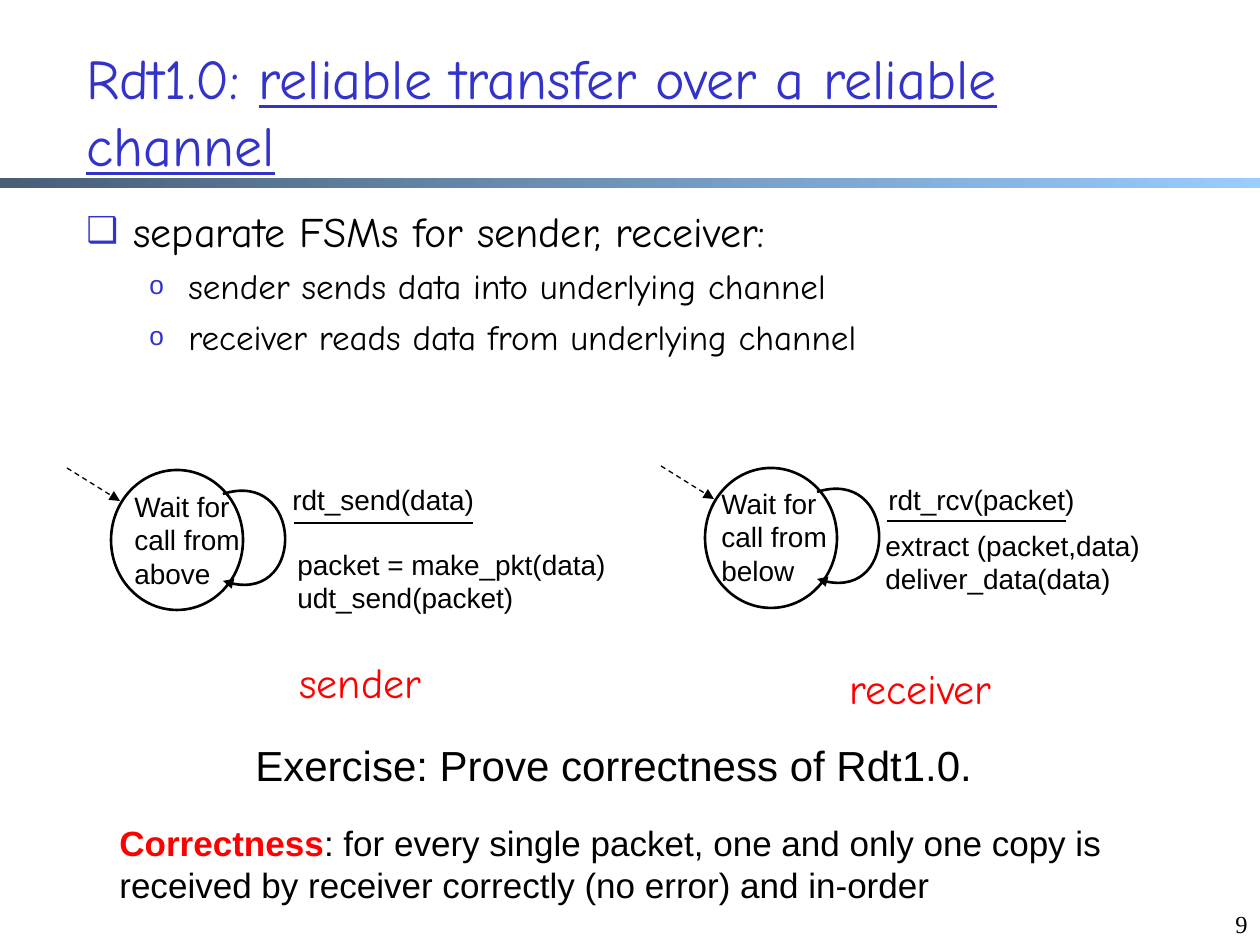
"""Build the Rdt1.0 slide with its sender and receiver state machines."""
from lxml.etree import SubElement
from pptx import Presentation
from pptx.dml.color import RGBColor
from pptx.enum.dml import MSO_LINE
from pptx.enum.shapes import MSO_CONNECTOR, MSO_SHAPE
from pptx.enum.text import MSO_ANCHOR, PP_ALIGN
from pptx.oxml.ns import qn
from pptx.util import Emu, Pt

SCALE = 914400 / 126
COLORS = {"black": "000000", "white": "FFFFFF", "blue": "3333CC", "red": "FF0000",
          "bar_start": "475E76", "bar_end": "99CCFF"}
COMIC, ARIAL, TIMES = "Comic Neue", "Arial", "Times New Roman"

TITLE = [("Rdt1.0: ", {}), ("reliable transfer over a reliable channel", {"underline": True})]
BULLETS = [
    (0, "separate FSMs for sender, receiver:"),
    (1, "sender sends data into underlying channel"),
    (1, "receiver reads data from underlying channel"),
]
BULLET_STYLES = [
    {"size": 24, "margin": 47, "hanging": 47, "mark": "❑", "percent": 85, "before": 6},
    {"size": 20, "margin": 102, "hanging": 39, "mark": "o", "percent": 75, "before": 5},
]
MACHINES = [
    {"origin": (111, 470), "rule": (294, 523),
     "state": ("Wait for call from above", (122, 483, 151, 126)),
     "event": ("rdt_send(data)", (280, 476, 311, 59)),
     "actions": (["packet = make_pkt(data)", "udt_send(packet)"], (285, 541, 369, 82)),
     "name": ("sender", (287, 650, 159, 63))},
    {"origin": (705, 468), "rule": (887, 521),
     "state": ("Wait for call from below", (709, 480, 151, 126)),
     "event": ("rdt_rcv(packet)", (876, 476, 213, 47)),
     "actions": (["extract (packet,data)", "deliver_data(data)"], (873, 522, 343, 59)),
     "name": ("receiver", (837, 656, 188, 63))},
]
STATE_SIZE = (132, 140)
RULE_LENGTH = 179
ENTRY = [(-44, -2), (9, 31)]
LOOP = [(112, 24), (191, -1), (196, 140), (112, 111)]
EXERCISE = "Exercise: Prove correctness of Rdt1.0."
CORRECTNESS = [
    ("Correctness", {"bold": True, "color": "red"}),
    (": for every single packet, one and only one copy is received by receiver "
     "correctly (no error) and in-order", {}),
]


def px(value):
    return Emu(round(value * SCALE))


def rgb(name):
    return RGBColor.from_string(COLORS[name])


def add_text(slide, box, paragraphs, size, font, color="black", wrap=True,
             anchor=MSO_ANCHOR.TOP, align=PP_ALIGN.LEFT):
    frame = slide.shapes.add_textbox(*map(px, box)).text_frame
    frame.word_wrap = wrap
    frame.vertical_anchor = anchor
    for index, runs in enumerate(paragraphs):
        paragraph = frame.add_paragraph() if index else frame.paragraphs[0]
        paragraph.alignment = align
        paragraph.font.size = Pt(size)
        paragraph.font.name = font
        paragraph.font.color.rgb = rgb(color)
        for text, style in [(runs, {})] if isinstance(runs, str) else runs:
            run = paragraph.add_run()
            run.text = text
            run.font.size = Pt(size)
            run.font.name = font
            run.font.color.rgb = rgb(style.get("color", color))
            run.font.bold = style.get("bold")
            run.font.underline = style.get("underline")
    return frame


def add_bullets(slide, box):
    frame = add_text(slide, box, [text for _, text in BULLETS], 24, COMIC)
    for paragraph, (level, _) in zip(frame.paragraphs, BULLETS):
        style = BULLET_STYLES[level]
        paragraph.level = level
        paragraph.space_before = Pt(style["before"])
        paragraph.font.size = paragraph.runs[0].font.size = Pt(style["size"])
        properties = paragraph._p.get_or_add_pPr()
        properties.set("marL", str(px(style["margin"])))
        properties.set("indent", str(-px(style["hanging"])))
        marks = [SubElement(properties, qn(f"a:{tag}")) for tag in
                 ("buClr", "buSzPct", "buFont", "buChar")]
        SubElement(marks[0], qn("a:srgbClr")).set("val", COLORS["blue"])
        marks[1].set("val", str(style["percent"] * 1000))
        marks[2].set("typeface", ARIAL)
        marks[3].set("char", style["mark"])
        properties.append(properties.find(qn("a:defRPr")))


def set_line(shape, width, arrow=False):
    shape.line.color.rgb = rgb("black")
    shape.line.width = Pt(width)
    if arrow:
        SubElement(shape.line._get_or_add_ln(), qn("a:tailEnd")).set("type", "triangle")


def add_line(slide, start, end, width):
    line = slide.shapes.add_connector(MSO_CONNECTOR.STRAIGHT, *map(px, (*start, *end)))
    SubElement(line._element.spPr, qn("a:effectLst"))
    set_line(line, width)
    return line


def add_loop(slide, points):
    builder = slide.shapes.build_freeform(*points[0], scale=SCALE)
    builder.add_line_segments(points[1:], close=False)
    loop = builder.convert_to_shape()
    loop.shadow.inherit = False
    loop.fill.background()
    set_line(loop, 1.5, arrow=True)
    outline = next(loop._element.iter(qn("a:path")))
    curve = SubElement(outline, qn("a:cubicBezTo"))
    for segment in outline.findall(qn("a:lnTo")):
        curve.append(segment[0])
        outline.remove(segment)


def add_machine(slide, machine):
    left, top = machine["origin"]

    def place(points):
        return [(left + x, top + y) for x, y in points]

    state = slide.shapes.add_shape(MSO_SHAPE.OVAL, *map(px, (left, top, *STATE_SIZE)))
    state.shadow.inherit = False
    state.fill.solid()
    state.fill.fore_color.rgb = rgb("white")
    set_line(state, 1.5)
    add_loop(slide, place(LOOP))
    entry = add_line(slide, *place(ENTRY), 0.75)
    entry.line.dash_style = MSO_LINE.DASH
    set_line(entry, 0.75, arrow=True)
    x, y = machine["rule"]
    add_line(slide, (x, y), (x + RULE_LENGTH, y), 1.5)
    for part in ("state", "event"):
        text, box = machine[part]
        add_text(slide, box, [text], 16, ARIAL)
    actions, box = machine["actions"]
    add_text(slide, box, actions, 16, ARIAL)
    name, box = machine["name"]
    add_text(slide, box, [name], 24, COMIC, "red", wrap=False)


def add_bar(slide, box):
    bar = slide.shapes.add_shape(MSO_SHAPE.RECTANGLE, *map(px, box))
    bar.shadow.inherit = False
    bar.line.fill.background()
    bar.fill.gradient()
    bar.fill.gradient_angle = 0
    for stop, position, color in zip(bar.fill.gradient_stops, (0, 1), ("bar_start", "bar_end")):
        stop.position = position
        stop.color.rgb = rgb(color)


def main():
    presentation = Presentation()
    presentation.slide_width, presentation.slide_height = px(1260), px(945)
    slide = presentation.slides.add_slide(presentation.slide_layouts[6])
    add_bar(slide, (0, 178, 1260, 10))
    add_text(slide, (966, 882, 294, 63), ["9"], 14, TIMES,
             anchor=MSO_ANCHOR.BOTTOM, align=PP_ALIGN.RIGHT)
    add_text(slide, (74, 32, 1102, 157), [TITLE], 32, COMIC, "blue", anchor=MSO_ANCHOR.MIDDLE)
    add_bullets(slide, (74, 199, 1089, 180))
    for machine in MACHINES:
        add_machine(slide, machine)
    add_text(slide, (243, 733, 748, 63), [EXERCISE], 24, ARIAL, wrap=False)
    add_text(slide, (107, 815, 1070, 97), [CORRECTNESS], 20, ARIAL)
    presentation.save("out.pptx")


if __name__ == "__main__":
    main()
